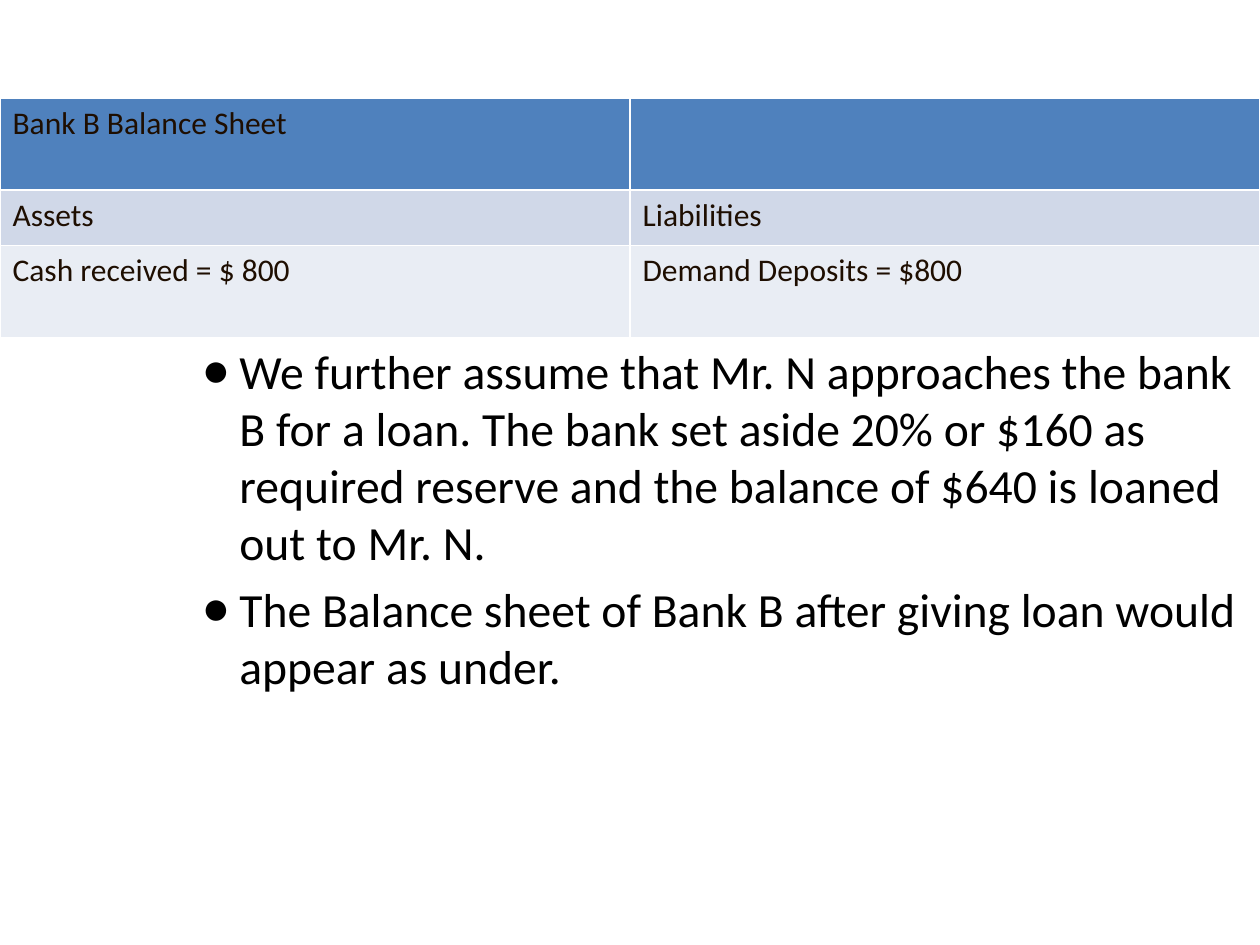
from lxml import etree
from pptx import Presentation
from pptx import util as u
from pptx.dml.color import RGBColor
from pptx.enum import text
from pptx.oxml import ns

BLACK = RGBColor(0x00, 0x00, 0x00)
BROWN = RGBColor(0x1E, 0x0E, 0x01)
ROW_FILLS = [
    RGBColor(0x4F, 0x81, 0xBD),
    RGBColor(0xD0, 0xD8, 0xE8),
    RGBColor(0xE9, 0xED, 0xF4),
]

BALANCE_SHEET = [
    ("Bank B Balance Sheet", ""),
    ("Assets", "Liabilities"),
    ("Cash received = $ 800", "Demand Deposits = $800"),
]
ROW_HEIGHTS = [0.73, 0.44, 0.73]
LOAN_POINTS = [
    "We further assume that Mr. N approaches the bank B for a loan. "
    "The bank set aside 20% or $160 as required reserve and the balance "
    "of $640 is loaned out to Mr. N.",
    "The Balance sheet of Bank B after giving loan would appear as under.",
]


class SlideWriter:
    font_name = "Calibri"

    def __init__(self, slide):
        self.slide = slide

    def style(self, paragraph, size, color):
        font = paragraph.font
        font.name = self.font_name
        font.size = u.Pt(size)
        font.bold = False
        font.color.rgb = color

    def table(self, rows, heights, fills, left, top, width):
        grid = self.slide.shapes.add_table(
            len(rows), len(rows[0]), u.Inches(left), u.Inches(top),
            u.Inches(width), u.Inches(sum(heights))).table
        for row, height, labels, fill in zip(grid.rows, heights, rows, fills):
            row.height = u.Inches(height)
            for cell, label in zip(row.cells, labels):
                cell.fill.solid()
                cell.fill.fore_color.rgb = fill
                cell.text = label
                self.style(cell.text_frame.paragraphs[0], 18, BROWN)

    def bullets(self, points, left, top, width, height):
        body = self.slide.placeholders[1]
        body.left, body.top = u.Inches(left), u.Inches(top)
        body.width, body.height = u.Inches(width), u.Inches(height)
        frame = body.text_frame
        frame.auto_size = text.MSO_AUTO_SIZE.NONE
        frame.text = "\n".join(points)
        for paragraph in frame.paragraphs:
            properties = paragraph._p.get_or_add_pPr()
            properties.set("marL", str(u.Inches(0.3)))
            properties.set("indent", str(-u.Inches(0.3)))
            bullet = etree.SubElement(properties, ns.qn("a:buChar"))
            bullet.set("char", "●")
            self.style(paragraph, 27.2, BLACK)


def main():
    deck = Presentation()
    deck.slide_width, deck.slide_height = u.Inches(10), u.Inches(7.5)
    slide = deck.slides.add_slide(deck.slide_layouts[1])
    title = slide.shapes.title.element
    title.getparent().remove(title)

    writer = SlideWriter(slide)
    writer.table(BALANCE_SHEET, ROW_HEIGHTS, ROW_FILLS, 0, 0.78, 10)
    writer.bullets(LOAN_POINTS, 1.5, 2.66, 8.5, 2.03)
    deck.save("out.pptx")


if __name__ == "__main__":
    main()
